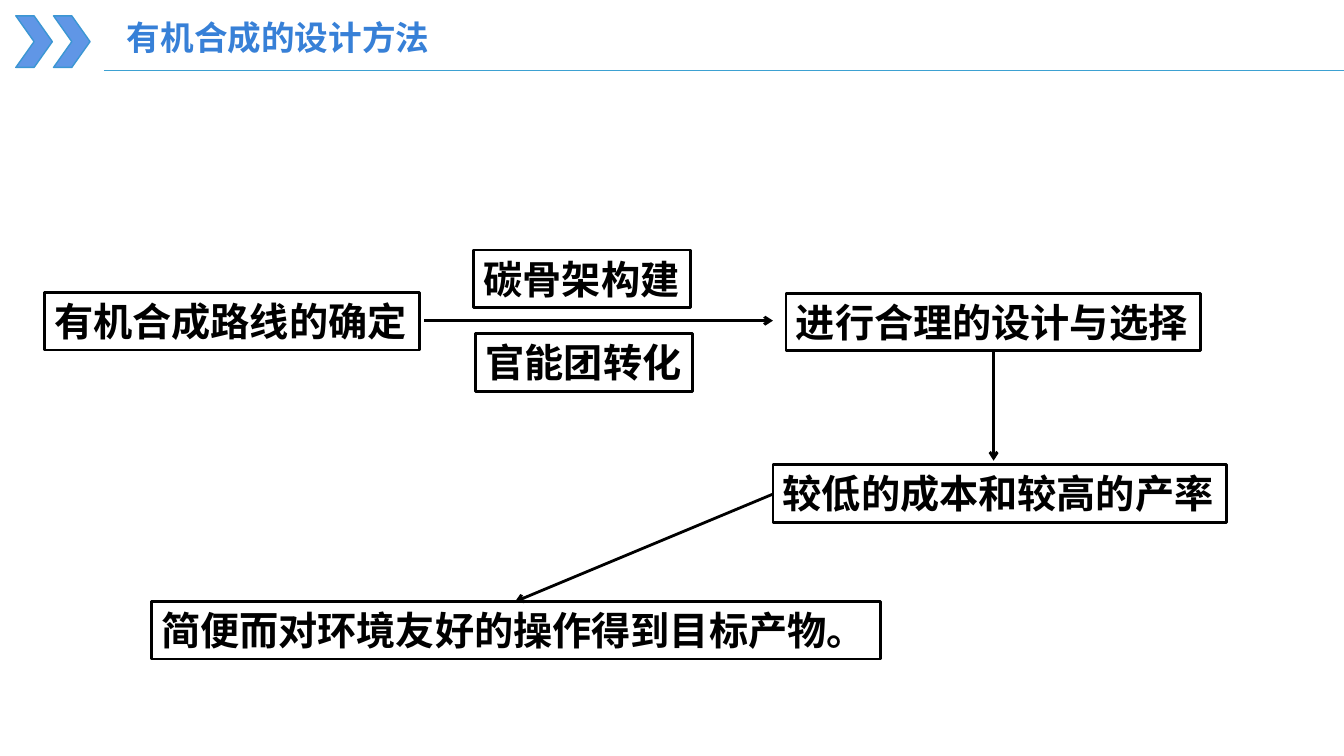
from pptx import Presentation
from pptx.dml.color import RGBColor
from pptx.enum.shapes import MSO_CONNECTOR, MSO_SHAPE
from pptx.enum.text import MSO_AUTO_SIZE
from pptx.oxml.ns import qn
from pptx.util import Cm, Pt
from lxml import etree

CHEVRON = MSO_SHAPE.CHEVRON
STRAIGHT = MSO_CONNECTOR.STRAIGHT
FIT_SHAPE = MSO_AUTO_SIZE.SHAPE_TO_FIT_TEXT

# Content: lengths in cm
CJK_FONT = "Noto Sans CJK SC"
STEP_FONT = "Times New Roman"
SLIDE_W, SLIDE_H = 33.87, 19.05
TITLE = "有机合成的设计方法"
STEP_H = 1.45
STEPS = [  # text, left, top, width
    ("碳骨架构建", 11.94, 6.3, 5.46),
    ("官能团转化", 11.99, 8.41, 5.46),
    ("有机合成路线的确定", 1.12, 7.37, 9.45),
    ("进行合理的设计与选择", 19.81, 7.39, 10.44),
    ("较低的成本和较高的产率", 19.48, 11.71, 11.43),
    ("简便而对环境友好的操作得到目标产物。", 3.81, 15.16, 18.39),
]
ARROWS = [  # start x, y, end x, y
    (10.69, 8.08, 19.48, 8.08),
    (25.04, 8.84, 25.04, 11.61),
    (19.48, 12.45, 12.98, 15.16),
]


def rgb(hex_color):
    return RGBColor.from_string(hex_color)


def add_text(text, left, top, width, height, size, font, color, wrap):
    box = slide.shapes.add_textbox(Cm(left), Cm(top), Cm(width), Cm(height))
    frame = box.text_frame
    frame.word_wrap = wrap
    frame.auto_size = FIT_SHAPE
    frame.text = text
    paragraph = frame.paragraphs[0]
    paragraph.font.size = Pt(size)
    paragraph.font.bold = True
    paragraph.font.color.rgb = rgb(color)
    paragraph.font.name = font
    # East Asian typeface follows the Latin one
    latin = paragraph._p.find(".//" + qn("a:latin"))
    east_asian = etree.Element(qn("a:ea"), typeface=CJK_FONT)
    latin.addnext(east_asian)
    return box


def add_line(x1, y1, x2, y2, color, weight, arrow=False):
    line = slide.shapes.add_connector(STRAIGHT, Cm(x1), Cm(y1), Cm(x2), Cm(y2))
    line.line.color.rgb = rgb(color)
    line.line.width = Pt(weight)
    if arrow:
        etree.SubElement(line.line._get_or_add_ln(), qn("a:tailEnd"), type="arrow")
    etree.SubElement(line._element.spPr, qn("a:effectLst"))


prs = Presentation()
prs.slide_width, prs.slide_height = Cm(SLIDE_W), Cm(SLIDE_H)
slide = prs.slides.add_slide(prs.slide_layouts[6])

# Header: two chevrons, rule and title
for i in range(2):
    chevron = slide.shapes.add_shape(CHEVRON, Cm(0.4 + 0.95 * i), Cm(0.4), Cm(0.92), Cm(1.3))
    chevron.shadow.inherit = False
    chevron.fill.solid()
    chevron.fill.fore_color.rgb = rgb("6096E6")
    chevron.line.color.rgb = rgb("3B96D3")
    chevron.line.width = Pt(1)
add_line(2.62, 1.78, SLIDE_W, 1.78, "3DA1D2", 0.5)
add_text(TITLE, 2.95, 0.3, 10.64, 1.27, 24, CJK_FONT, "3780D7", True)

# Flow chart: framed steps, then arrows
for text, left, top, width in STEPS:
    step = add_text(text, left, top, width, STEP_H, 28, STEP_FONT, "000000", False)
    step.line.color.rgb = rgb("000000")
    step.line.width = Pt(2)
for arrow in ARROWS:
    add_line(*arrow, "000000", 2, arrow=True)

prs.save("out.pptx")
